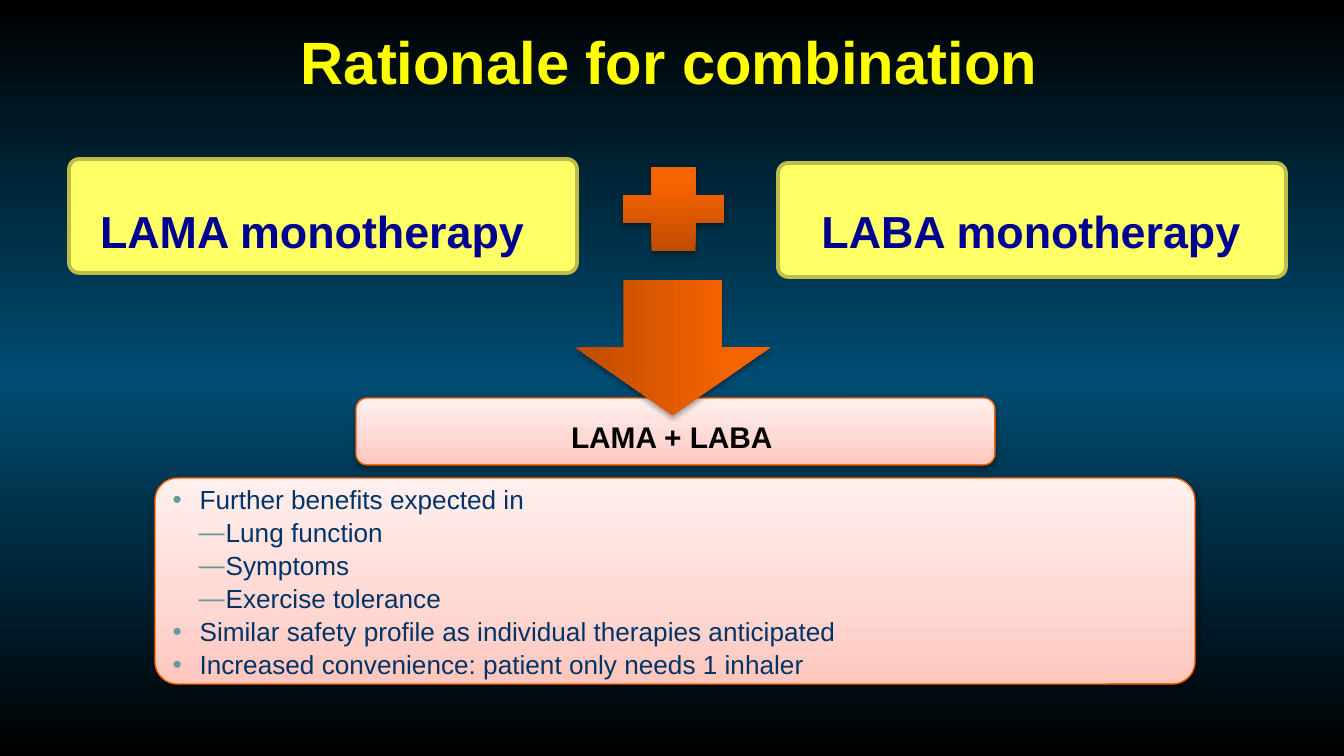
"""Build the slide on the rationale for combining LAMA and LABA."""
from typing import NamedTuple, Optional

from lxml.etree import SubElement
from pptx import Presentation
from pptx.dml.color import RGBColor
from pptx.enum.shapes import MSO_SHAPE as Preset
from pptx.enum.text import MSO_ANCHOR as Anchor, MSO_AUTO_SIZE as AutoSize, PP_ALIGN as Align
from pptx.oxml.ns import qn
from pptx.util import Emu, Pt

EMU_PER_PX = 914400 / 134.4

BLACK = RGBColor(0x00, 0x00, 0x00)
DEEP_BLUE = RGBColor(0x00, 0x4C, 0x72)
TITLE_YELLOW = RGBColor(0xFF, 0xFF, 0x00)
BOX_YELLOW = RGBColor(0xFF, 0xFF, 0x66)
BOX_EDGE = RGBColor(0xBD, 0xBD, 0x4B)
NAVY = RGBColor(0x00, 0x00, 0x90)
BODY_BLUE = RGBColor(0x00, 0x33, 0x66)
BULLET_TEAL = RGBColor(0x66, 0x99, 0x99)
ORANGE_EDGE = RGBColor(0xF9, 0x64, 0x00)

BACKDROP = ((0, BLACK), (50, DEEP_BLUE), (100, BLACK))
ORANGE = ((0, RGBColor(0xBE, 0x4C, 0x00)), (80, RGBColor(0xF7, 0x63, 0x00)),
          (100, RGBColor(0xF8, 0x63, 0x00)))
PINK = ((0, RGBColor(0xFF, 0xC6, 0xBD)), (35, RGBColor(0xFF, 0xD7, 0xD1)),
        (100, RGBColor(0xFF, 0xF0, 0xEE)))


class Box(NamedTuple):
    """Place of a part in px."""
    left: int
    top: int
    width: int
    height: int


class Shadow(NamedTuple):
    """Soft shadow that falls straight down."""
    opacity: int
    distance: float


class Panel(NamedTuple):
    """Look of one filled shape."""
    preset: Preset
    box: Box
    rounding: Optional[float] = None
    solid: Optional[RGBColor] = None
    stops: tuple = ()
    edge: Optional[RGBColor] = None
    edge_pt: float = 0
    shadow: Optional[Shadow] = None
    rotation: int = 0


class Label(NamedTuple):
    """One bold centred line of text."""
    text: str
    box: Box
    size: int
    color: RGBColor
    wrap: bool = False


class Bullet(NamedTuple):
    """One line of the benefits list."""
    text: str
    level: int = 0


ARROW_SHADOW = Shadow(35, 1.8)
CARD_SHADOW = Shadow(38, 1.6)
MONOTHERAPIES = [
    Panel(Preset.ROUNDED_RECTANGLE, Box(left, top, 508, 114), 0.09,
          solid=BOX_YELLOW, edge=BOX_EDGE, edge_pt=2)
    for left, top in ((69, 159), (778, 163))
]
PLUS = Panel(Preset.CROSS, Box(623, 167, 101, 84), 0.34, stops=ORANGE, shadow=ARROW_SHADOW)
COMBINATION = Panel(Preset.ROUNDED_RECTANGLE, Box(356, 398, 639, 67), 0.17, stops=PINK,
                    edge=ORANGE_EDGE, edge_pt=0.75, shadow=CARD_SHADOW)
BENEFITS = COMBINATION._replace(box=Box(155, 478, 1040, 206), rounding=0.11)
ARROW = Panel(Preset.RIGHT_ARROW, Box(605, 250, 135, 195), stops=ORANGE,
              shadow=ARROW_SHADOW, rotation=90)

LABELS = (
    Label("Rationale for combination", Box(24, 18, 1291, 86), 32, TITLE_YELLOW, True),
    Label("LAMA monotherapy", Box(84, 197, 456, 67), 24, NAVY),
    Label("LABA monotherapy", Box(806, 197, 450, 67), 24, NAVY),
)
BULLETS = (
    Bullet("Further benefits expected in"),
    Bullet("Lung function", 1),
    Bullet("Symptoms", 1),
    Bullet("Exercise tolerance", 1),
    Bullet("Similar safety profile as individual therapies anticipated"),
    Bullet("Increased convenience: patient only needs 1 inhaler"),
)


def px(length: int) -> Emu:
    """Turn px into EMU."""
    return Emu(round(length * EMU_PER_PX))


def apply(target, formats: dict) -> None:
    """Set each attribute named in the formats."""
    for name, value in formats.items():
        setattr(target, name, value)


def add_color(parent, color: RGBColor):
    """Add an RGB colour element."""
    return SubElement(parent, qn("a:srgbClr"), val=str(color))


def fill_gradient(fill, owner, stops: tuple, angle: int) -> None:
    """Fill with a linear gradient of any number of stops."""
    fill.gradient()
    fill.gradient_angle = angle
    stop_list = next(owner.iter(qn("a:gsLst")))
    for old_stop in list(stop_list):
        stop_list.remove(old_stop)
    for percent, color in stops:
        add_color(SubElement(stop_list, qn("a:gs"), pos=str(percent * 1000)), color)


def add_panel(slide, panel: Panel):
    """Draw a filled shape."""
    shape = slide.shapes.add_shape(panel.preset, *map(px, panel.box))
    shape.rotation = panel.rotation
    shape.shadow.inherit = False
    if panel.rounding is not None:
        shape.adjustments[0] = panel.rounding
    if panel.stops:
        fill_gradient(shape.fill, shape._element.spPr, panel.stops, 90)
    else:
        shape.fill.solid()
        shape.fill.fore_color.rgb = panel.solid
    if panel.edge is None:
        shape.line.fill.background()
    else:
        shape.line.color.rgb = panel.edge
        shape.line.width = Pt(panel.edge_pt)
    if panel.shadow:
        effects = shape._element.spPr.find(qn("a:effectLst"))
        outer = SubElement(effects, qn("a:outerShdw"), blurRad=str(Pt(3.1)),
                           dist=str(Pt(panel.shadow.distance)), dir="5400000", rotWithShape="0")
        SubElement(add_color(outer, BLACK), qn("a:alpha"), val=str(panel.shadow.opacity * 1000))
    return shape


def write(paragraph, text: str, size: int, color: RGBColor, bold: bool, align: Align) -> None:
    """Write one run into a paragraph."""
    paragraph.alignment = align
    run = paragraph.add_run()
    run.text = text
    apply(run.font, {"name": "Arial", "size": Pt(size), "bold": bold})
    run.font.color.rgb = color


def add_label(slide, label: Label) -> None:
    """Draw a bold centred text box."""
    frame = slide.shapes.add_textbox(*map(px, label.box)).text_frame
    apply(frame, {"word_wrap": label.wrap, "auto_size": AutoSize.SHAPE_TO_FIT_TEXT,
                  "vertical_anchor": Anchor.MIDDLE})
    write(frame.paragraphs[0], label.text, label.size, label.color, True, Align.CENTER)


def add_bullets(frame, bullets: tuple) -> None:
    """Write the two-level benefits list."""
    apply(frame, {"word_wrap": True, "vertical_anchor": Anchor.MIDDLE, "margin_left": px(11),
                  "margin_right": px(5), "margin_top": px(5), "margin_bottom": px(5)})
    for index, bullet in enumerate(bullets):
        paragraph = frame.add_paragraph() if index else frame.paragraphs[0]
        apply(paragraph, {"level": bullet.level, "line_spacing": 1.05})
        write(paragraph, bullet.text, 14, BODY_BLUE, False, Align.LEFT)
        properties = paragraph._p.get_or_add_pPr()
        properties.set("marL", str(px(27 + 26 * bullet.level)))
        properties.set("indent", str(px(-27)))
        add_color(SubElement(properties, qn("a:buClr")), BULLET_TEAL)
        SubElement(properties, qn("a:buFont"), typeface="Arial")
        SubElement(properties, qn("a:buChar"), char="•—"[bullet.level])


def main() -> None:
    """Build and save the slide."""
    deck = Presentation()
    apply(deck, {"slide_width": px(1344), "slide_height": px(756)})
    slide = deck.slides.add_slide(deck.slide_layouts[6])
    fill_gradient(slide.background.fill, slide._element, BACKDROP, 270)
    for panel in (*MONOTHERAPIES, PLUS):
        add_panel(slide, panel)
    combination = add_panel(slide, COMBINATION).text_frame
    apply(combination, {"word_wrap": False, "vertical_anchor": Anchor.BOTTOM})
    write(combination.paragraphs[0], "LAMA + LABA ", 16, BLACK, True, Align.CENTER)
    add_bullets(add_panel(slide, BENEFITS).text_frame, BULLETS)
    add_panel(slide, ARROW)
    for label in LABELS:
        add_label(slide, label)
    deck.save("out.pptx")


if __name__ == "__main__":
    main()
